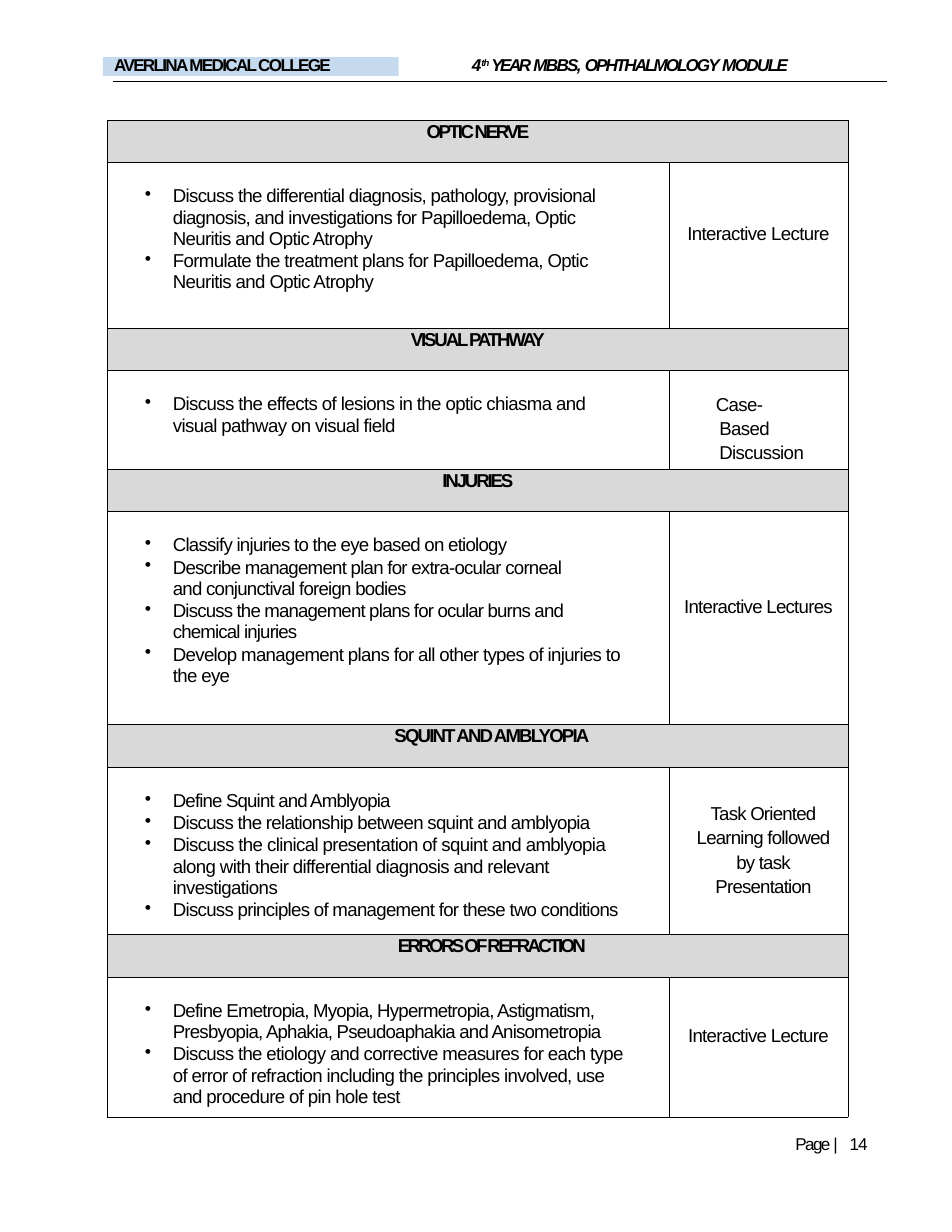
from lxml import etree
from pptx import Presentation, util as u
from pptx.dml.color import RGBColor
from pptx.enum import shapes, text
from pptx.oxml.ns import qn

Pt = u.Pt
FONT = "Arial"
INK, BAND, HIGHLIGHT, PAPER = "000000", "D9D9D9", "C5D9EF", "FFFFFF"

# ---- Content ----
COLLEGE = "AVERLINA MEDICAL COLLEGE"
# text, size, letter spacing, baseline in percent
COURSE = [("4", 11, -0.3, 0), ("th ", 10.5, -0.5, 32), ("YEAR ", 11, -1.7, 0),
          ("MBBS, ", 11, -1.1, 0), ("OPHTHALMOLOGY ", 11, -1.3, 0), ("MODULE", 11, -1.1, 0)]
PAGE = [("Page ", 11, -1.1, 0), ("| ", 11, 2.2, 0), ("14", 11, -0.6, 0)]

# \v breaks a line; each objective carries its letter spacing
TOPICS = [
    dict(title="OPTIC NERVE", tracking=-1.5, indent=0, height=106.4,
         objectives=[
             ("Discuss the differential diagnosis, pathology, provisional\vdiagnosis, and "
              "investigations for Papilloedema, Optic\vNeuritis and Optic Atrophy", -0.43),
             ("Formulate the treatment plans for Papilloedema, Optic\v"
              "Neuritis and Optic Atrophy", -0.4)],
         method="Interactive Lecture", method_top=39.3, method_tracking=-0.4),
    dict(title="VISUAL PATHWAY", tracking=-1.4, indent=0, height=61.7,
         objectives=[
             ("Discuss the effects of lesions in the optic chiasma and\v"
              "visual pathway on visual field", -0.41)],
         method="Case-\vBased\vDiscussion", method_top=12.7, method_tracking=-0.4,
         method_left=32.4, method_hang=-2.2),
    dict(title="INJURIES", tracking=-1.4, indent=0, height=136.9,
         objectives=[
             ("Classify injuries to the eye based on etiology", -0.47),
             ("Describe management plan for extra-ocular corneal\v"
              "and conjunctival foreign bodies", -0.48),
             ("Discuss the management plans for ocular burns and\vchemical injuries", -0.53),
             ("Develop management plans for all other types of injuries to\vthe eye", -0.42)],
         method="Interactive Lectures", method_top=54.5, method_tracking=-0.48),
    dict(title="SQUINT AND AMBLYOPIA", tracking=-1.2, indent=18, height=107.7,
         objectives=[
             ("Define Squint and Amblyopia", -0.54),
             ("Discuss the relationship between squint and amblyopia", -0.44),
             ("Discuss the clinical presentation of squint and amblyopia\valong with their "
              "differential diagnosis and relevant\vinvestigations", -0.41),
             ("Discuss principles of management for these two conditions", -0.44)],
         method="Task Oriented\vLearning followed\vby task\vPresentation",
         method_top=21, method_tracking=-0.5, method_left=6.5),
    dict(title="ERRORS OF REFRACTION", tracking=-1.7, indent=18, height=89.7,
         objectives=[
             ("Define Emetropia, Myopia, Hypermetropia, Astigmatism,\v"
              "Presbyopia, Aphakia, Pseudoaphakia and Anisometropia", -0.52),
             ("Discuss the etiology and corrective measures for each type\vof error of refraction "
              "including the principles involved, use\vand procedure of pin hole test", -0.42)],
         method="Interactive Lecture", method_top=30.8, method_tracking=-0.45),
]
TITLE_HEIGHT = 27.4
COLUMNS = (360.7, 115.2)


# ---- Helpers ----
def rgb(hex_colour):
    return RGBColor.from_string(hex_colour)


def style(run, size=12, tracking=0, baseline=0, bold=False, italic=False):
    font = run.font
    font.name, font.size, font.bold, font.italic = FONT, Pt(size), bold, italic
    font.color.rgb = rgb(INK)
    props = run._r.get_or_add_rPr()
    props.set("spc", str(round(tracking * 100)))
    if baseline:
        props.set("baseline", str(baseline * 1000))


def style_all(paragraph, **options):
    for run in paragraph.runs:
        style(run, **options)


def indent(paragraph, left, hang=0):
    props = paragraph._p.get_or_add_pPr()
    props.set("marL", str(Pt(left)))
    props.set("indent", str(Pt(hang)))
    return props


def no_insets(frame):
    frame.margin_left = frame.margin_right = frame.margin_top = frame.margin_bottom = 0


def label(left, top, width, height, parts, **options):
    frame = page.shapes.add_textbox(Pt(left), Pt(top), Pt(width), Pt(height)).text_frame
    no_insets(frame)
    frame.word_wrap = True
    paragraph = frame.paragraphs[0]
    for words, size, tracking, baseline in parts:
        run = paragraph.add_run()
        run.text = words
        style(run, size, tracking, baseline, **options)
    return paragraph


def dress(cell, fill):
    no_insets(cell)
    cell.fill.solid()
    cell.fill.fore_color.rgb = rgb(fill)
    props = cell._tc.get_or_add_tcPr()
    for place, side in enumerate(("lnL", "lnR", "lnT", "lnB")):
        border = etree.Element(qn("a:" + side), w=str(Pt(0.5)))
        colour = etree.SubElement(border, qn("a:solidFill"))
        etree.SubElement(colour, qn("a:srgbClr"), val=INK)
        props.insert(place, border)


deck = Presentation()
deck.slide_width, deck.slide_height = Pt(612), Pt(792)
page = deck.slides.add_slide(deck.slide_layouts[6])

# ---- Page header and footer ----
rule = page.shapes.add_connector(shapes.MSO_CONNECTOR.STRAIGHT,
                                 Pt(72.7), Pt(52.4), Pt(570.2), Pt(52.4))
rule.line.color.rgb = rgb(INK)
rule.line.width = Pt(0.75)
etree.SubElement(rule._element.spPr, qn("a:effectLst"))

course = label(302.4, 34.8, 262.8, 14, COURSE, bold=True, italic=True)
indent(course, 0.9)
footer = label(510.5, 730.1, 50, 13, PAGE)
footer.line_spacing = Pt(11.5)
indent(footer, 0.9)

college = page.shapes.add_shape(shapes.MSO_SHAPE.RECTANGLE,
                                Pt(66.2), Pt(36.7), Pt(190.1), Pt(12.2))
college.shadow.inherit = False
college.fill.solid()
college.fill.fore_color.rgb = rgb(HIGHLIGHT)
college.line.fill.background()
no_insets(college.text_frame)
college.text_frame.vertical_anchor = text.MSO_ANCHOR.TOP
college.text_frame.text = COLLEGE
name = college.text_frame.paragraphs[0]
name.alignment = text.PP_ALIGN.LEFT
name.line_spacing = Pt(11.6)
indent(name, 7.2)
style_all(name, size=11, tracking=-1.1, bold=True)

# ---- Topic table: a title row and a content row per topic ----
heights = [h for topic in TOPICS for h in (TITLE_HEIGHT, topic["height"])]
table = page.shapes.add_table(len(heights), 2, Pt(69.3), Pt(77.2),
                              Pt(sum(COLUMNS)), Pt(sum(heights))).table
table.first_row = table.horz_banding = False
for column, width in zip(table.columns, COLUMNS):
    column.width = Pt(width)
for row, height in zip(table.rows, heights):
    row.height = Pt(height)

for number, topic in enumerate(TOPICS):
    title_row, content_row = 2 * number, 2 * number + 1
    for column in range(2):
        dress(table.cell(title_row, column), BAND)
        dress(table.cell(content_row, column), PAPER)

    heading = table.cell(title_row, 0)
    heading.merge(table.cell(title_row, 1))
    heading.text_frame.text = topic["title"]
    title = heading.text_frame.paragraphs[0]
    title.alignment = text.PP_ALIGN.CENTER
    title.line_spacing = Pt(14.1)
    indent(title, topic["indent"])
    style_all(title, tracking=topic["tracking"], bold=True)

    objectives = table.cell(content_row, 0)
    objectives.margin_top = Pt(14.6)
    for place, (words, tracking) in enumerate(topic["objectives"]):
        frame = objectives.text_frame
        objective = frame.add_paragraph() if place else frame.paragraphs[0]
        objective.text = words
        objective.line_spacing = 1.02
        objective.space_before = Pt(0.6 if place else 0)
        props = indent(objective, 41.8, -18)
        etree.SubElement(props, qn("a:buChar"), char="•")
        style_all(objective, tracking=tracking)

    method_cell = table.cell(content_row, 1)
    method_cell.margin_top = Pt(topic["method_top"])
    method_cell.text_frame.text = topic["method"]
    method = method_cell.text_frame.paragraphs[0]
    hang = topic.get("method_hang", 0)
    method.alignment = text.PP_ALIGN.LEFT if hang else text.PP_ALIGN.CENTER
    method.line_spacing = 1.17 if "\v" in topic["method"] else 1.0
    indent(method, topic.get("method_left", 0), hang)
    style_all(method, tracking=topic["method_tracking"])

deck.save("out.pptx")
